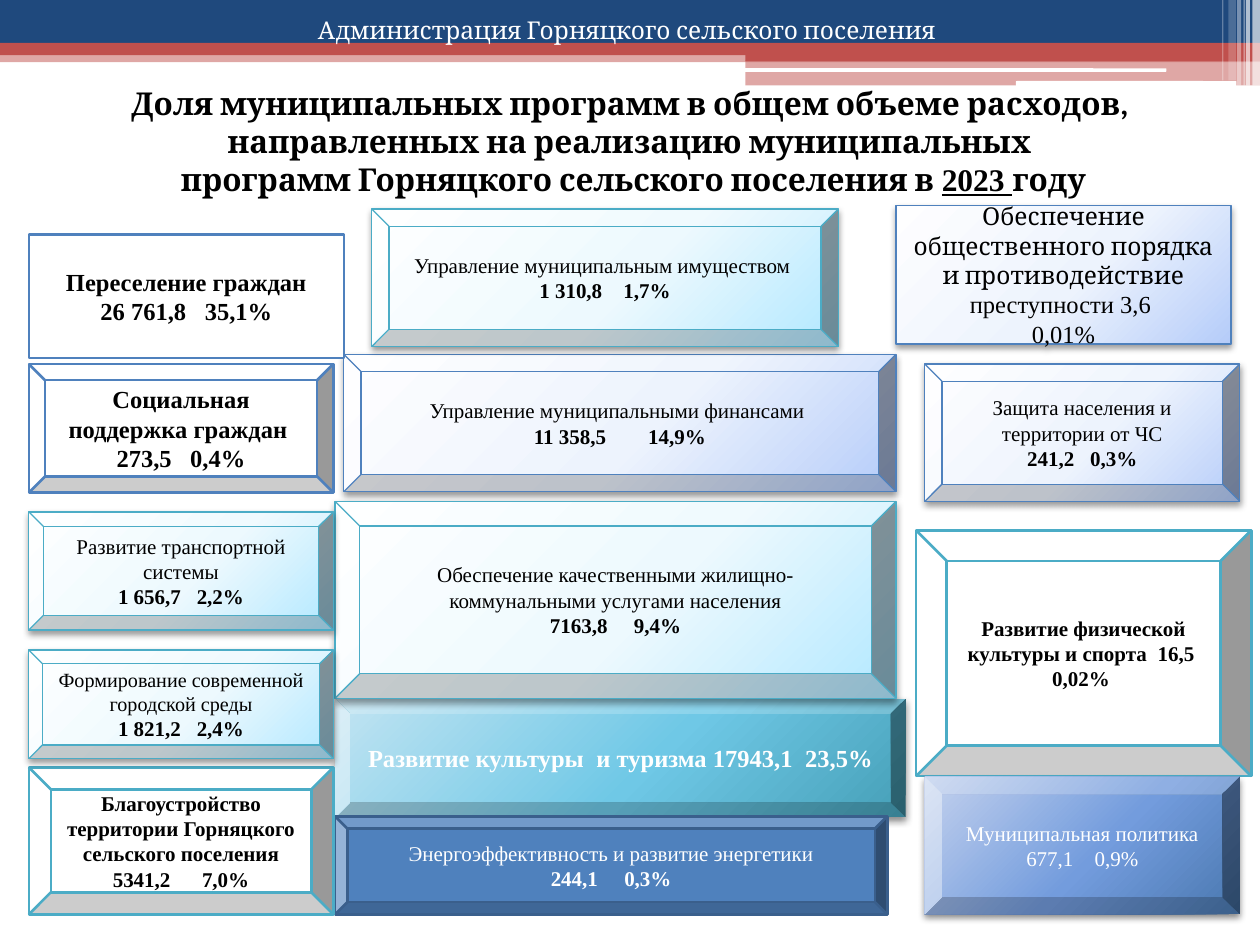
from dataclasses import dataclass, replace

from lxml import etree
from pptx import Presentation
from pptx.dml.color import RGBColor
from pptx.enum import shapes, text
from pptx.oxml import ns
from pptx.util import Pt


@dataclass(frozen=True)
class Style:
    size: float
    font: str = "Times New Roman"
    color: str = "000000"
    bold: bool = False
    underline: bool = False


class Theme:
    white, navy, red = "FFFFFF", "1F497D", "C0504D"
    blue, teal, dark_blue = "4F81BD", "4BACC6", "3A5F8C"

    # Gradient stops at 0, 55 and 100 percent
    pale_blue = ("FEFEFF", "EDF3FD", "B5CCF9")
    pale_teal = ("FEFFFF", "EDF9FE", "B2E8FF")
    strong_teal = ("C2E4F2", "6FC8E6", "46A0B8")
    strong_blue = ("C4D2EE", "739CDD", "4A78B0")

    header = Style(14, "Cambria", white)
    heading = Style(18, "Cambria", bold=True)
    year = Style(18, bold=True, underline=True)
    body = Style(12)
    body_bold = replace(body, bold=True)
    small = replace(body, size=11.5)
    large = Style(14)
    large_bold = replace(large, bold=True)
    large_serif = replace(large, font="Cambria")
    light = replace(body, color=white)
    light_bold = replace(light, bold=True)
    light_large = replace(large_bold, color=white)


# Look of a box: fill, line colour, line width, shadow opacity
PALE_BLUE = (Theme.pale_blue, Theme.blue, 0.75, 40)
PALE_TEAL = (Theme.pale_teal, Theme.teal, 0.75, 40)
STRONG_TEAL = (Theme.strong_teal, None, 0, 45)
STRONG_BLUE = (Theme.strong_blue, None, 0, 45)
BLUE_OUTLINE = (Theme.white, Theme.blue, 1.5, 0)
TEAL_OUTLINE = (Theme.white, Theme.teal, 1.5, 0)
SOLID_BLUE = (Theme.blue, Theme.dark_blue, 1.5, 0)

BEVEL = shapes.MSO_SHAPE.BEVEL
PROCESS = shapes.MSO_SHAPE.FLOWCHART_PROCESS
RECTANGLE = shapes.MSO_SHAPE.RECTANGLE
ROUNDED = shapes.MSO_SHAPE.ROUNDED_RECTANGLE

# Header parts: preset, left, top, width, height, colour, opacity
HEADER = [
    (RECTANGLE, 0, 29, 720, 6.5, Theme.red, 50),
    (RECTANGLE, 0, 0, 720, 24.5, Theme.navy, 100),
    (RECTANGLE, 0, 24.5, 720, 7, Theme.red, 100),
    (RECTANGLE, 426, 28, 294, 7, Theme.red, 100),
    (RECTANGLE, 426, 34.5, 294, 14.4, Theme.red, 50),
    (ROUNDED, 425.5, 39, 241, 2, Theme.white, 100),
    (ROUNDED, 580.5, 46.3, 126, 2.8, Theme.white, 100),
]
# White stripes at the right end: left, width, height, opacity
STRIPES = [(715.7, 4.3, 49, 65), (712, 2.2, 49, 65), (710.6, 0.7, 49, 60),
           (707, 2.2, 49, 40), (702, 4.3, 46, 20), (698.4, 0.7, 46, 30)]

# Left edges and width of the side columns
LEFT, RIGHT, SIDE, RIGHT_SIDE, MIDDLE = 16.5, 528.5, 174, 180, 191.5

# Boxes: preset, (left, top, width, height), look, paragraphs.
# A paragraph is a style and its pieces; a number is a gap that many spaces wide.
BOXES = [
    (BEVEL, (LEFT, 208, SIDE, 73.5), BLUE_OUTLINE, [
        (Theme.large_bold, "Социальная поддержка граждан "),
        (Theme.large_bold, "273,5", 3, "0,4%")]),
    (BEVEL, (196.5, 202.5, 315.5, 78.5), PALE_BLUE, [
        (Theme.body, "Управление муниципальными финансами "),
        (Theme.body_bold, "11 358,5", 8, "14,9%")]),
    (BEVEL, (523.5, 303, 191.5, 140.5), TEAL_OUTLINE, [
        (Theme.body_bold, "Развитие физической культуры и спорта", 2, "16,5", 2),
        (Theme.body_bold, "0,02%", 2)]),
    (BEVEL, (MIDDLE, 399.5, 326, 67.5), STRONG_TEAL, [
        (Theme.light_large, "Развитие культуры", 2, "и туризма 17943,1", 2, "23,5%")]),
    (BEVEL, (MIDDLE, 466.5, 315.5, 56), SOLID_BLUE, [
        (Theme.light, "Энергоэффективность и развитие энергетики"),
        (Theme.light_bold, "244,1", 5, "0,3%")]),
    (BEVEL, (MIDDLE, 286.5, 320.5, 112.5), PALE_TEAL, [
        (Theme.body, "Обеспечение качественными жилищно-коммунальными услугами населения"),
        (Theme.body_bold, "7163,8", 5, "9,4%")]),
    (BEVEL, (LEFT, 292.5, SIDE, 67.5), PALE_TEAL, [
        (Theme.body, "Развитие транспортной системы"),
        (Theme.body_bold, "1 656,7", 3, "2,2%")]),
    (BEVEL, (RIGHT, 208, RIGHT_SIDE, 78.5), PALE_BLUE, [
        (Theme.body, "Защита населения и территории от ЧС"),
        (Theme.body_bold, "241,2", 3, "0,3%")]),
    (BEVEL, (RIGHT, 444, RIGHT_SIDE, 78.5), STRONG_BLUE, [
        (Theme.light, "Муниципальная политика"),
        (Theme.light, "677,1", 4, "0,9%")]),
    (BEVEL, (LEFT, 438.5, SIDE, 84), TEAL_OUTLINE, [
        (Theme.body_bold, "Благоустройство территории Горняцкого сельского поселения",
         2, "5341,2", 6, "7,0%")]),
    (PROCESS, (LEFT, 134, 180, 70.5), BLUE_OUTLINE, [
        (Theme.large_bold, "Переселение граждан", 7, "26 761,8", 3, "35,1%")]),
    (PROCESS, (512, 117.5, 191.5, 79), PALE_BLUE, [
        (Theme.large_serif, "Обеспечение общественного порядка и противодействие ",
         Theme.large, "преступности 3,6 "),
        (Theme.large, "0,01%")]),
    (BEVEL, (212.5, 119.5, 266.5, 78.5), PALE_TEAL, [
        (Theme.body, "Управление муниципальным имуществом "),
        (Theme.body_bold, "1 310,8", 4, "1,7%")]),
    (BEVEL, (LEFT, 371.5, SIDE, 62), PALE_TEAL, [
        (Theme.small, "Формирование современной городской среды"),
        (Theme.body_bold, "1 821,2", 3, "2,4%")]),
]

HEADING = [
    (Theme.heading, "Доля муниципальных программ в общем объеме расходов, "
                    "направленных на реализацию муниципальных"),
    (Theme.heading, " программ Горняцкого сельского поселения в ",
     Theme.year, "2023 ", Theme.heading, "году"),
]


def add_xml(parent, tag, **attributes):
    return etree.SubElement(parent, ns.qn(tag), {k: str(v) for k, v in attributes.items()})


def add_color(parent, color, opacity=100):
    node = add_xml(parent, "a:srgbClr", val=color)
    if opacity < 100:
        add_xml(node, "a:alpha", val=opacity * 1000)


def add_run(paragraph, piece, style):
    run = paragraph.add_run()
    font = run.font
    font.size, font.name = Pt(style.size), style.font
    font.bold, font.underline = style.bold, style.underline
    font.color.rgb = RGBColor.from_string(style.color)
    if isinstance(piece, int):
        # One space, widened by letter spacing (a space is a quarter em)
        run.text = " "
        run._r.get_or_add_rPr().set("spc", str(int((piece - 1) * style.size * 25)))
    else:
        run.text = piece


def fill_text(frame, paragraphs, alignment=text.PP_ALIGN.CENTER):
    frame.word_wrap = True
    for index, pieces in enumerate(paragraphs):
        paragraph = frame.add_paragraph() if index else frame.paragraphs[0]
        paragraph.alignment = alignment
        for piece in pieces:
            if isinstance(piece, Style):
                style = piece
            else:
                add_run(paragraph, piece, style)


def add_shape(slide, preset, box, fill):
    shape = slide.shapes.add_shape(preset, *map(Pt, box))
    shape.shadow.inherit = False
    if isinstance(fill, str):
        shape.fill.solid()
        shape.fill.fore_color.rgb = RGBColor.from_string(fill)
    else:
        gradient = etree.Element(ns.qn("a:gradFill"), rotWithShape="1")
        stops = add_xml(gradient, "a:gsLst")
        for position, color in zip((0, 55, 100), fill):
            add_color(add_xml(stops, "a:gs", pos=position * 1000), color)
        circle = add_xml(gradient, "a:path", path="circle")
        add_xml(circle, "a:fillToRect", l=-40000, t=-90000, r=140000, b=190000)
        shape._element.spPr.find(ns.qn("a:prstGeom")).addnext(gradient)
    shape.line.fill.background()
    return shape


def add_header(slide):
    stripes = [(RECTANGLE, left, 0, width, height, Theme.white, opacity)
               for left, width, height, opacity in STRIPES]
    for preset, *box, color, opacity in HEADER + stripes:
        shape = add_shape(slide, preset, box, color)
        if opacity < 100:
            solid = shape._element.spPr.find(ns.qn("a:solidFill"))
            add_xml(solid[0], "a:alpha", val=opacity * 1000)


def add_title(slide):
    title = slide.shapes.title
    title.left, title.top, title.width, title.height = map(Pt, (174.5, -16.5, 479.5, 67.5))
    title.text_frame.auto_size = text.MSO_AUTO_SIZE.NONE
    title.text_frame.vertical_anchor = text.MSO_ANCHOR.MIDDLE
    fill_text(title.text_frame, [(Theme.header, "Администрация Горняцкого сельского поселения")],
              text.PP_ALIGN.LEFT)
    # Bring the title in front of the header bands
    slide.shapes._spTree.append(title._element)


def add_box(slide, preset, box, look, paragraphs):
    fill, line_color, line_width, shadow = look
    shape = add_shape(slide, preset, box, fill)
    if line_color:
        shape.line.color.rgb = RGBColor.from_string(line_color)
        shape.line.width = Pt(line_width)
    if shadow:
        effects = shape._element.spPr.find(ns.qn("a:effectLst"))
        outer = add_xml(effects, "a:outerShdw", blurRad=Pt(4), dist=Pt(2),
                        dir=5400000, rotWithShape=0)
        add_color(outer, "000000", shadow)
    shape.text_frame.vertical_anchor = text.MSO_ANCHOR.MIDDLE
    fill_text(shape.text_frame, paragraphs)
    return shape


def add_heading(slide):
    heading = slide.shapes.add_textbox(*map(Pt, (0, 44.5, 720, 72.5)))
    heading.text_frame.auto_size = text.MSO_AUTO_SIZE.SHAPE_TO_FIT_TEXT
    fill_text(heading.text_frame, HEADING)


def main():
    presentation = Presentation()
    presentation.slide_width, presentation.slide_height = Pt(720), Pt(540)
    slide = presentation.slides.add_slide(presentation.slide_layouts[5])
    add_header(slide)
    add_title(slide)
    add_heading(slide)
    # Programme boxes, from back to front
    for box in BOXES:
        shape = add_box(slide, *box)
        if box[1][1] == 438.5:
            shape.adjustments[0] = 0.15
    presentation.save("out.pptx")


if __name__ == "__main__":
    main()
